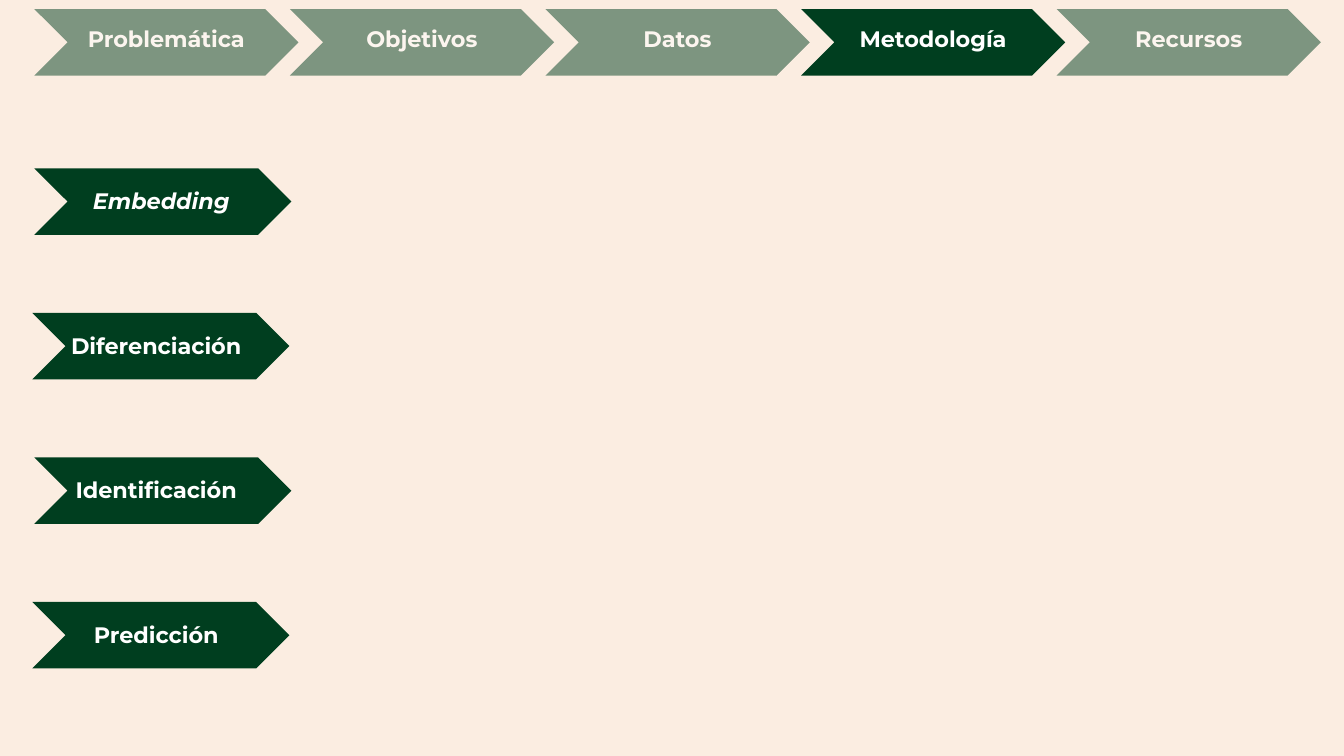
from dataclasses import dataclass

from lxml.etree import SubElement
from pptx import Presentation
from pptx.dml.color import RGBColor
from pptx.enum.shapes import MSO_SHAPE
from pptx.enum.text import MSO_AUTO_SIZE, PP_ALIGN
from pptx.oxml.ns import qn
from pptx.util import Inches, Pt


@dataclass(frozen=True)
class Theme:
    background: RGBColor = RGBColor(0xFB, 0xED, 0xE1)
    green: RGBColor = RGBColor(0x00, 0x3E, 0x1F)
    white: RGBColor = RGBColor(0xFF, 0xFF, 0xFF)
    font: str = "Montserrat"
    label_size: int = 16


THEME = Theme()
STAGES = ["Problemática", "Objetivos", "Datos", "Metodología", "Recursos"]
STEPS = ["Embedding", "Diferenciación", "Identificación", "Predicción"]
STAGE_PITCH = 2.535
STEP_PITCH = 1.434


def add_chevron(s, left, top, width, height, color=THEME.green, opacity=None):
    sp = s.shapes.add_shape(MSO_SHAPE.CHEVRON, Inches(left), Inches(top),
                            Inches(width), Inches(height))
    sp.shadow.inherit = False
    sp.fill.solid()
    sp.fill.fore_color.rgb = color
    sp.line.fill.background()
    if opacity is not None:
        rgb = sp.fill._xPr.find(f".//{qn('a:srgbClr')}")
        SubElement(rgb, qn("a:alpha")).set("val", str(opacity * 1000))


def add_text(s, text, left, top, width=1.94, height=0.37, *,
             size=THEME.label_size, color=THEME.white, bold=True, italic=False):
    sp = s.shapes.add_textbox(Inches(left), Inches(top),
                              Inches(width), Inches(height))
    tf = sp.text_frame
    tf.word_wrap = True
    tf.auto_size = MSO_AUTO_SIZE.SHAPE_TO_FIT_TEXT
    p = tf.paragraphs[0]
    p.alignment = PP_ALIGN.CENTER
    r = p.add_run()
    r.text = text
    r.font.name = THEME.font
    r.font.size = Pt(size)
    r.font.bold = bold
    r.font.italic = italic
    r.font.color.rgb = color


def add_stages(s):
    lefts = [0.34 + i * STAGE_PITCH for i in range(len(STAGES))]
    for left in lefts:
        add_chevron(s, left, 0.09, 2.62, 0.66)
    for left, stage in zip(lefts, STAGES):
        add_text(s, stage, left + 0.34, 0.2)


def add_veil(s, left, top, width):
    add_chevron(s, left, top, width, 0.78, THEME.background, opacity=50)


def add_steps(s):
    for i, step in enumerate(STEPS):
        top = 1.67 + i * STEP_PITCH
        add_chevron(s, 0.32 if i % 2 else 0.34, top, 2.55, 0.66)
        add_text(s, step, 0.58 if i else 0.63, top + 0.14,
                 italic=step == "Embedding")


def main():
    prs = Presentation()
    prs.slide_width, prs.slide_height = Inches(13.33), Inches(7.5)
    s = prs.slides.add_slide(prs.slide_layouts[6])
    s.background.fill.solid()
    s.background.fill.fore_color.rgb = THEME.background

    # Progress bar, with veils over the inactive stages
    add_stages(s)
    add_veil(s, 10.32, 0.02, 3.02)
    add_veil(s, 0.06, 0.01, 7.99)

    # Steps of the methodology
    add_steps(s)

    prs.save("out.pptx")


if __name__ == "__main__":
    main()
